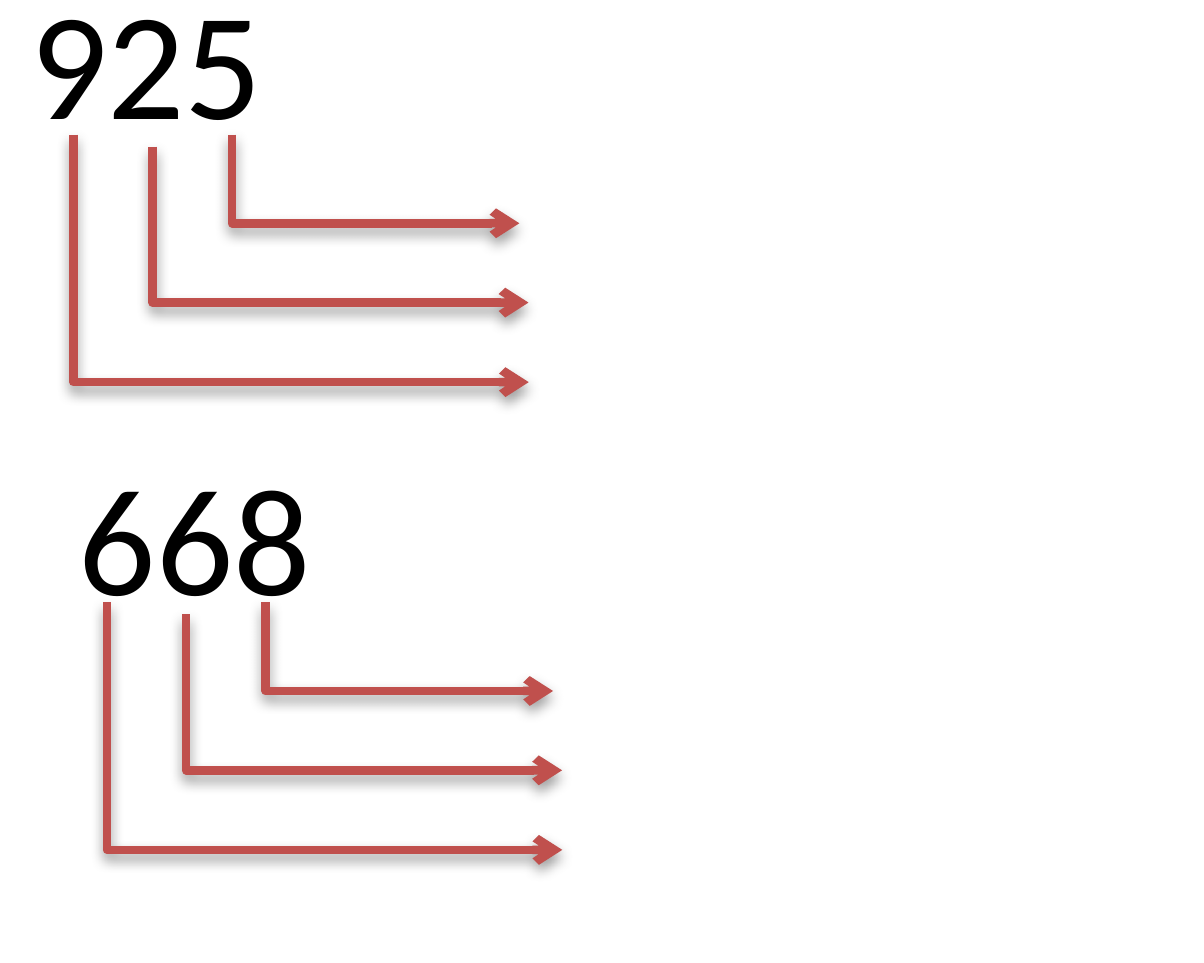
from lxml import etree
from pptx import Presentation
from pptx import util as u
from pptx.dml.color import RGBColor
from pptx.enum import shapes, text
from pptx.oxml import parse_xml
from pptx.oxml.ns import nsdecls, qn

COLORS = {"digits": "000000", "arrow": "C0504D", "shadow": "000000", "background": "FFFFFF"}


def write_text(frame, content, font="Calibri", size=36, color="digits"):
    run = frame.paragraphs[0].add_run()
    run.text = content
    run.font.name = font
    run.font.size = u.Pt(size)
    run.font.color.rgb = RGBColor.from_string(COLORS[color])


class PlaceValueSlide:
    line_width = 2

    def __init__(self, presentation):
        self.slide = presentation.slides.add_slide(presentation.slide_layouts[6])
        fill = self.slide.background.fill
        fill.solid()
        fill.fore_color.rgb = RGBColor.from_string(COLORS["background"])

    def number(self, content, left, top, width, height=0.71):
        shape = self.slide.shapes.add_textbox(*map(u.Inches, (left, top, width, height)))
        frame = shape.text_frame
        frame.word_wrap = True
        frame.auto_size = text.MSO_AUTO_SIZE.SHAPE_TO_FIT_TEXT
        write_text(frame, content)

    def elbow_arrow(self, left, top, right, bottom):
        connector = self.slide.shapes.add_connector(
            shapes.MSO_CONNECTOR.ELBOW, *map(u.Inches, (left, top, right, bottom)))
        connector.line.color.rgb = RGBColor.from_string(COLORS["arrow"])
        connector.line.width = u.Pt(self.line_width)
        properties = connector._element.spPr
        adjustments = properties.find(qn("a:prstGeom")).get_or_add_avLst()
        etree.SubElement(adjustments, qn("a:gd"), name="adj1", fmla="val 0")
        etree.SubElement(properties.find(qn("a:ln")), qn("a:tailEnd"), type="arrow")
        properties.append(parse_xml(
            f'<a:effectLst {nsdecls("a")}>'
            '<a:outerShdw blurRad="40000" dist="20000" dir="5400000" rotWithShape="0">'
            f'<a:srgbClr val="{COLORS["shadow"]}"><a:alpha val="38000"/></a:srgbClr>'
            '</a:outerShdw></a:effectLst>'))


def main():
    presentation = Presentation()
    presentation.slide_width = u.Inches(3.94)
    presentation.slide_height = u.Inches(3.15)
    slide = PlaceValueSlide(presentation)

    slide.number("925", 0, -0.16, 1.42)
    slide.number("668", 0.16, 1.4, 1.34)

    digit_arrows = [(0.76, 0.44, 1.7, 0.73), (0.5, 0.48, 1.73, 0.99), (0.24, 0.44, 1.73, 1.25)]
    for shift_x, shift_y in [(0, 0), (0.11, 1.53)]:
        for left, top, right, bottom in digit_arrows:
            slide.elbow_arrow(left + shift_x, top + shift_y, right + shift_x, bottom + shift_y)

    presentation.save("out.pptx")


if __name__ == "__main__":
    main()
